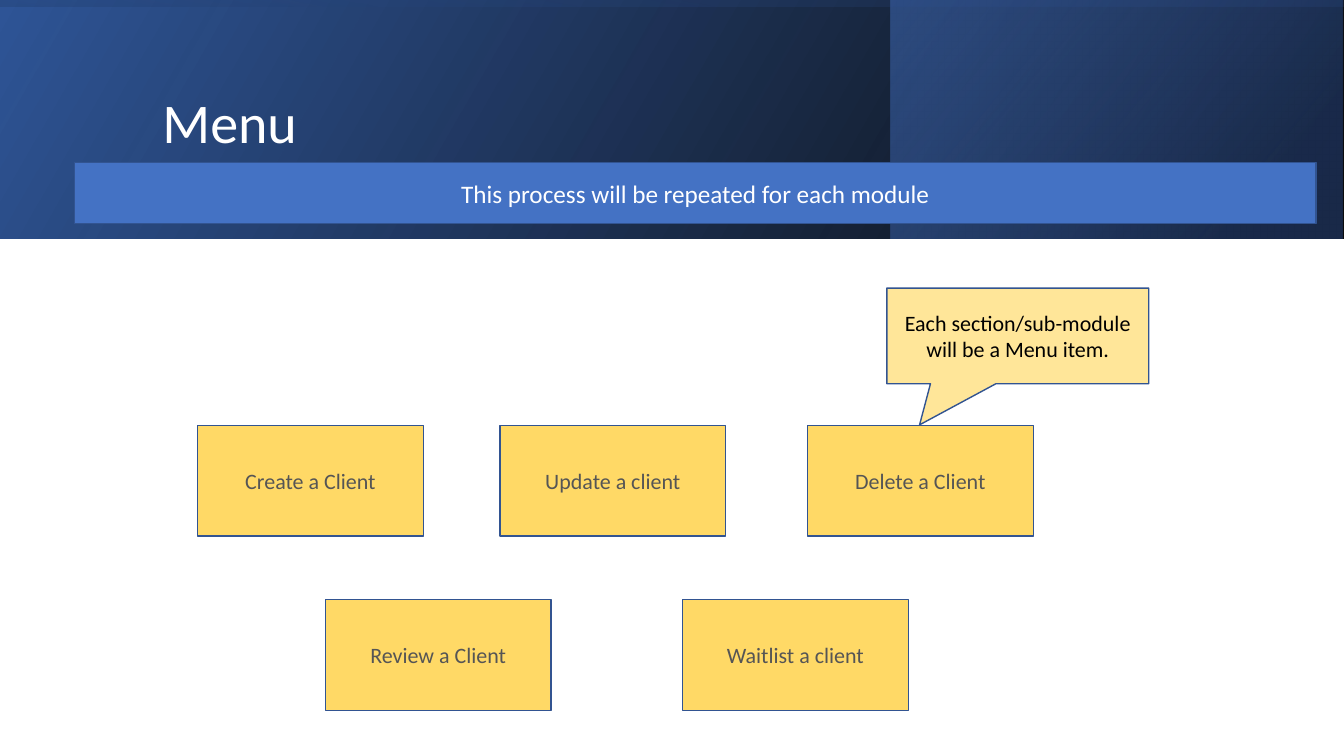
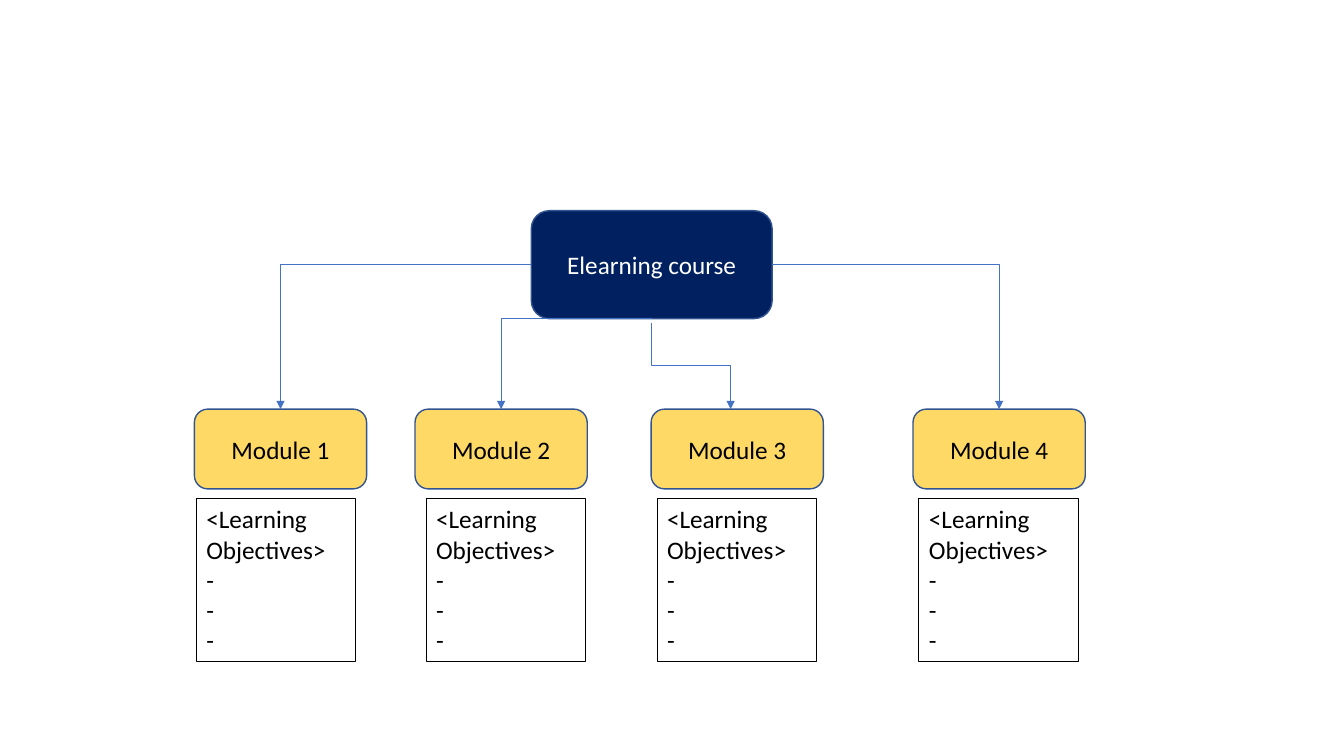
from dataclasses import dataclass

from lxml import etree
from pptx import Presentation
from pptx.dml.color import RGBColor
from pptx.enum.shapes import MSO_CONNECTOR, MSO_SHAPE
from pptx.enum.text import MSO_ANCHOR, MSO_AUTO_SIZE, PP_ALIGN
from pptx.oxml.ns import qn
from pptx.util import Cm, Pt

RECT = MSO_SHAPE.RECTANGLE
ROUND = MSO_SHAPE.ROUNDED_RECTANGLE
SPEECH = MSO_SHAPE.RECTANGULAR_CALLOUT
ELBOW = MSO_CONNECTOR.ELBOW
CENTER = PP_ALIGN.CENTER
LEFT = PP_ALIGN.LEFT
MIDDLE = MSO_ANCHOR.MIDDLE
NO_FIT = MSO_AUTO_SIZE.NONE
GROW = MSO_AUTO_SIZE.SHAPE_TO_FIT_TEXT

BLACK = RGBColor(0x00, 0x00, 0x00)
WHITE = RGBColor(0xFF, 0xFF, 0xFF)
GRAY = RGBColor(0x55, 0x55, 0x55)
NAVY = RGBColor(0x00, 0x20, 0x60)
DEEP = RGBColor(0x20, 0x38, 0x64)
ROYAL = RGBColor(0x2F, 0x55, 0x97)
BLUE = RGBColor(0x44, 0x72, 0xC4)
EDGE = RGBColor(0x32, 0x54, 0x91)
GOLD = RGBColor(0xFF, 0xD9, 0x66)
CREAM = RGBColor(0xFF, 0xE6, 0x99)

FONT = "Calibri"
WIDE, HIGH = 33.87, 19.05
BAND_H = 6.02
TILE_W, TILE_H = 5.69, 2.79
MOD_W, MOD_H, MOD_Y = 4.34, 2.01, 10.31
NOTE_W, NOTE_H, NOTE_Y = 4.01, 4.11, 12.57


@dataclass(frozen=True)
class Stop:
    place: float
    color: RGBColor
    alpha: int


@dataclass(frozen=True)
class Band:
    x: float
    w: float
    angle: float
    stops: tuple[Stop, Stop]


@dataclass(frozen=True)
class Box:
    text: str
    x: float
    y: float
    w: float
    h: float
    fill: RGBColor
    ink: RGBColor
    size: float = 18
    after: float = 0
    kind: int = RECT


@dataclass(frozen=True)
class Link:
    x1: float
    y1: float
    x2: float
    y2: float
    down: bool = False


BANDS = (
    Band(0, WIDE, 150, (Stop(0, BLACK, 96), Stop(1, ROYAL, 100))),
    Band(22.45, 11.38, 140, (Stop(0.19, DEEP, 68), Stop(1, BLUE, 48))),
    Band(0, WIDE, 260, (Stop(0.23, ROYAL, 16), Stop(0.99, BLACK, 45))),
)
TILES = (
    ("Create a Client", 4.98, 10.72),
    ("Update a client", 12.6, 10.72),
    ("Delete a Client", 20.35, 10.72),
    ("Review a Client", 8.2, 15.11),
    ("Waitlist a client", 17.2, 15.11),
)
TIP = Box("Each section/sub-module will be a Menu item.",
          22.35, 7.26, 6.6, 2.41, CREAM, BLACK, 15.7, 6, SPEECH)
BAR = Box("This process will be repeated for each module",
          1.88, 4.09, 31.29, 1.55, BLUE, WHITE)
COURSE = Box("Elearning course", 13.39, 5.31, 6.07, 2.72, NAVY, WHITE, kind=ROUND)
MODS = ((4.9, 4.95), (10.46, 10.74), (16.41, 16.56), (23.01, 23.16))
NOTE = ("<Learning Objectives>", "-", "-", "-")


def add_run(para, text: str, size: float, ink: RGBColor) -> None:
    run = para.add_run()
    run.text = text
    run.font.name = FONT
    run.font.size = Pt(size)
    run.font.color.rgb = ink


def add_band(slide, band: Band) -> None:
    shape = slide.shapes.add_shape(RECT, Cm(band.x), 0, Cm(band.w), Cm(BAND_H))
    shape.shadow.inherit = False
    shape.fill.gradient()
    shape.fill.gradient_angle = band.angle
    for grad, stop in zip(shape.fill.gradient_stops, band.stops):
        grad.position = stop.place
        grad.color.rgb = stop.color
    for node, stop in zip(shape._element.iter(qn("a:srgbClr")), band.stops):
        etree.SubElement(node, qn("a:alpha"), val=str(stop.alpha * 1000))
    shape.line.fill.background()


def add_title(slide, text: str) -> None:
    title = slide.shapes.title
    title.left, title.top, title.width, title.height = map(Cm, (3.84, 0.97, 27, 4.37))
    frame = title.text_frame
    frame.vertical_anchor = MIDDLE
    frame.auto_size = NO_FIT
    para = frame.paragraphs[0]
    para.alignment = LEFT
    para.line_spacing = 0.9
    add_run(para, text, 40, WHITE)
    slide.shapes._spTree.append(title._element)


def add_box(slide, box: Box):
    shape = slide.shapes.add_shape(box.kind, *map(Cm, (box.x, box.y, box.w, box.h)))
    shape.shadow.inherit = False
    shape.fill.solid()
    shape.fill.fore_color.rgb = box.fill
    shape.line.color.rgb = EDGE
    shape.line.width = Pt(1)
    frame = shape.text_frame
    frame.word_wrap = True
    frame.vertical_anchor = MIDDLE
    para = frame.paragraphs[0]
    para.alignment = CENTER
    para.space_after = Pt(box.after)
    add_run(para, box.text, box.size, box.ink)
    return shape


def add_note(slide, x: float) -> None:
    shape = slide.shapes.add_textbox(*map(Cm, (x, NOTE_Y, NOTE_W, NOTE_H)))
    shape.line.color.rgb = BLACK
    shape.line.width = Pt(0.75)
    frame = shape.text_frame
    frame.word_wrap = True
    frame.auto_size = GROW
    for i, text in enumerate(NOTE):
        para = frame.add_paragraph() if i else frame.paragraphs[0]
        add_run(para, text, 18, BLACK)


def add_link(slide, link: Link) -> None:
    ends = (link.x1, link.y1, link.x2, link.y2)
    if link.down:
        mid_x, mid_y = (link.x1 + link.x2) / 2, (link.y1 + link.y2) / 2
        half_w, half_h = (link.y2 - link.y1) / 2, (link.x2 - link.x1) / 2
        ends = (mid_x + half_w, mid_y - half_h, mid_x - half_w, mid_y + half_h)
    line = slide.shapes.add_connector(ELBOW, *map(Cm, ends))
    line.line.color.rgb = BLUE
    line.line.width = Pt(0.5)
    props = line._element.spPr
    if link.down:
        props.find(qn("a:xfrm")).set("rot", "16200000")
    else:
        props.find(qn("a:prstGeom")).set("prst", "bentConnector2")
    etree.SubElement(props.find(qn("a:ln")), qn("a:tailEnd"), type="triangle")
    etree.SubElement(props, qn("a:effectLst"))


def draw_menu(deck) -> None:
    slide = deck.slides.add_slide(deck.slide_layouts[5])
    for band in BANDS:
        add_band(slide, band)
    add_title(slide, "Menu")
    for text, x, y in TILES:
        add_box(slide, Box(text, x, y, TILE_W, TILE_H, GOLD, GRAY, 15.7, 6))
    tip = add_box(slide, TIP)
    tip.adjustments[0] = -0.375
    tip.adjustments[1] = 0.93
    add_box(slide, BAR)


def draw_course(deck) -> None:
    slide = deck.slides.add_slide(deck.slide_layouts[6])
    add_box(slide, COURSE)
    for i, (x, _) in enumerate(MODS, 1):
        add_box(slide, Box(f"Module {i}", x, MOD_Y, MOD_W, MOD_H, GOLD, BLACK, kind=ROUND))
    mids = [x + MOD_W / 2 for x, _ in MODS]
    side_y = COURSE.y + COURSE.h / 2
    base_x, base_y = COURSE.x + COURSE.w / 2, COURSE.y + COURSE.h
    for link in (
        Link(COURSE.x + COURSE.w, side_y, mids[3], MOD_Y),
        Link(COURSE.x, side_y, mids[0], MOD_Y),
        Link(base_x, base_y, mids[1], MOD_Y),
        Link(base_x, base_y + 0.1, 18.41, MOD_Y, True),
    ):
        add_link(slide, link)
    for _, x in MODS:
        add_note(slide, x)


def main() -> None:
    deck = Presentation()
    deck.slide_width, deck.slide_height = Cm(WIDE), Cm(HIGH)
    draw_menu(deck)
    draw_course(deck)
    deck.save("out.pptx")


if __name__ == "__main__":
    main()
